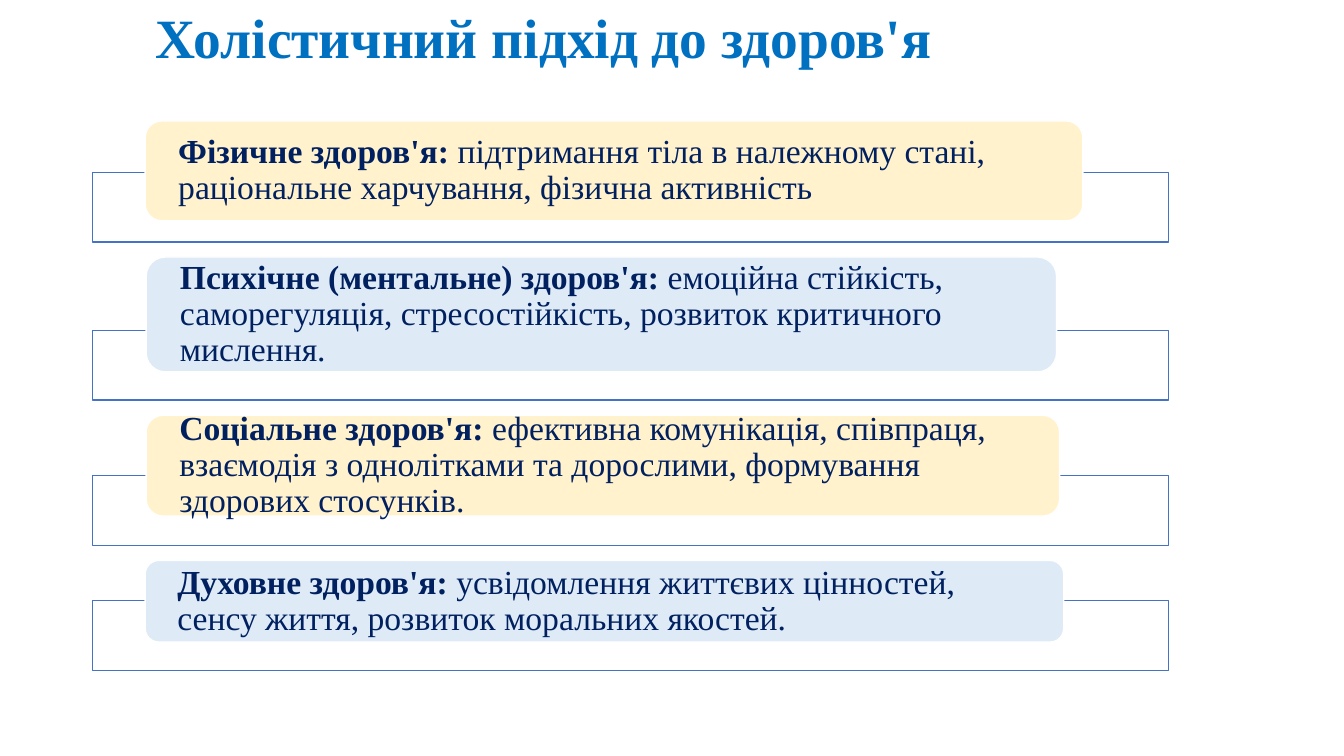
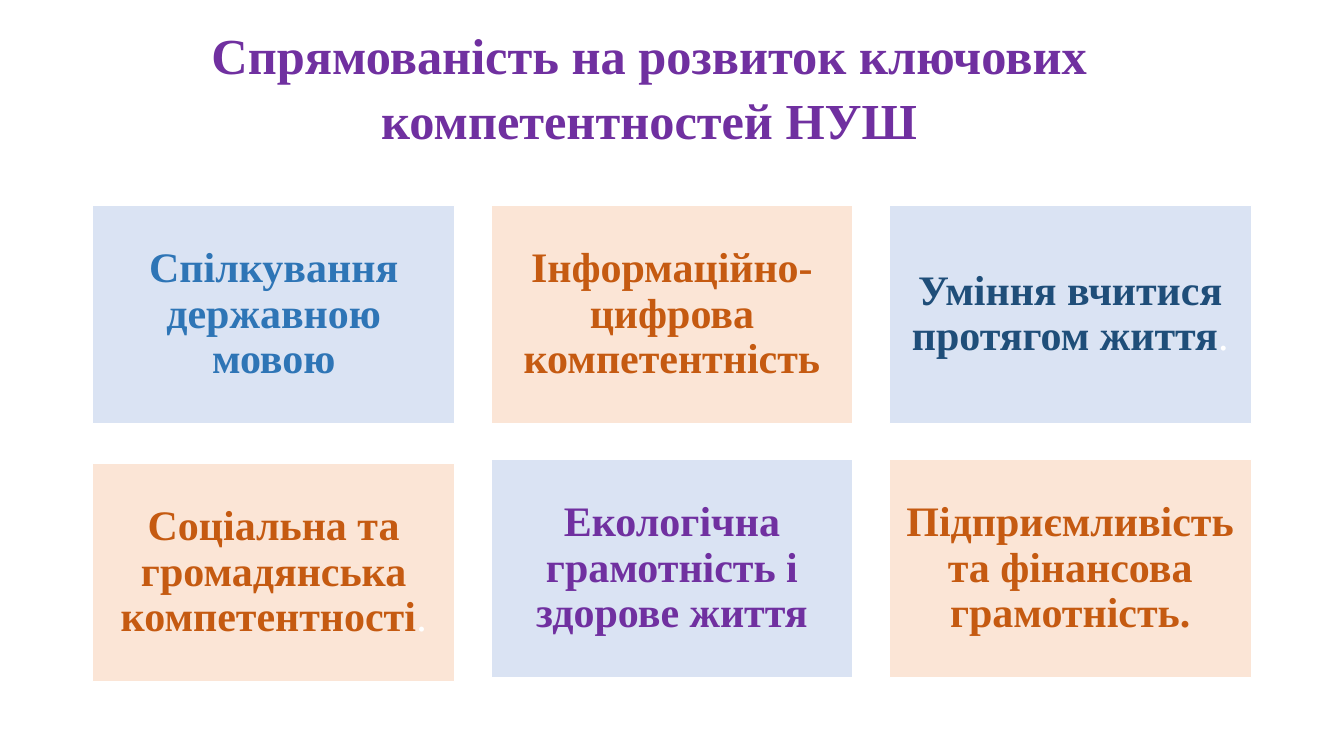
from pptx import Presentation
from pptx.dml.color import RGBColor
from pptx.enum.shapes import MSO_SHAPE
from pptx.enum.text import MSO_ANCHOR, MSO_AUTO_SIZE, PP_ALIGN
from pptx.util import Inches, Pt

RECTANGLE, ROUNDED = MSO_SHAPE.RECTANGLE, MSO_SHAPE.ROUNDED_RECTANGLE
LEFT, CENTER = PP_ALIGN.LEFT, PP_ALIGN.CENTER
MIDDLE, NO_FIT = MSO_ANCHOR.MIDDLE, MSO_AUTO_SIZE.NONE
FONT = "Times New Roman"
TITLE_ONLY = 5
COLORS = {
    "white": "FFFFFF", "frame": "4472C4", "title": "0070C0", "navy": "002060",
    "cream": "FFF2CC", "sky": "DEEBF7", "ice": "DAE3F3", "peach": "FBE5D6",
    "blue": "2E75B6", "orange": "C55A11", "deep": "1F4E79", "purple": "7030A0",
}
ASPECTS = [
    ("Фізичне здоров'я:",
     " підтримання тіла в належному стані, раціональне харчування, фізична активність",
     (1.44, 1.2, 9.3, 0.99), 1.71),
    ("Психічне (ментальне) здоров'я:",
     " емоційна стійкість, саморегуляція, стресостійкість, розвиток критичного мислення.",
     (1.45, 2.55, 9.03, 1.14), 3.28),
    ("Соціальне здоров'я:",
     " ефективна комунікація, співпраця, взаємодія з однолітками та дорослими, "
     "формування здорових стосунків.",
     (1.45, 4.12, 9.06, 1), 4.72),
    ("Духовне здоров'я:",
     " усвідомлення життєвих цінностей, сенсу життя, розвиток моральних якостей.",
     (1.44, 5.56, 9.11, 0.81), 5.96),
]
COMPETENCES = [
    ("Спілкування державною мовою", "", "blue", 0),
    ("Інформаційно-цифрова компетентність", "", "orange", 0),
    ("Уміння вчитися протягом життя", ".", "deep", 0),
    ("Соціальна та громадянська компетентності", ".", "orange", 0.04),
    ("Екологічна грамотність і здорове життя", "", "purple", 0),
    ("Підприємливість та фінансова грамотність.", "", "orange", 0),
]


def rgb(name):
    """Return the named colour."""
    return RGBColor.from_string(COLORS[name])


def write_text(shape, spans, size, align=LEFT, spacing=0.9, insets=(0.1, 0.05)):
    """Fill a shape with one paragraph of (text, colour, bold) spans."""
    frame = shape.text_frame
    frame.word_wrap = True
    frame.auto_size = NO_FIT
    frame.vertical_anchor = MIDDLE
    frame.margin_left = frame.margin_right = Inches(insets[0])
    frame.margin_top = frame.margin_bottom = Inches(insets[1])
    para = frame.paragraphs[0]
    para.alignment = align
    para.line_spacing = spacing
    for text, color, bold in spans:
        span = para.add_run()
        span.text = text
        span.font.name = FONT
        span.font.size = Pt(size)
        span.font.bold = bold
        span.font.color.rgb = rgb(color)


def add_box(page, kind, box, fill, line="white"):
    """Add a filled, outlined shape without a shadow."""
    shape = page.shapes.add_shape(kind, *map(Inches, box))
    shape.shadow.inherit = False
    shape.fill.solid()
    shape.fill.fore_color.rgb = rgb(fill)
    shape.line.color.rgb = rgb(line)
    shape.line.width = Pt(1)
    return shape


def add_page(deck, title, box, color, size, **layout):
    """Add a slide with its title placed in the given box."""
    page = deck.slides.add_slide(deck.slide_layouts[TITLE_ONLY])
    heading = page.shapes.title
    heading.left, heading.top, heading.width, heading.height = map(Inches, box)
    write_text(heading, [(title, color, True)], size, **layout)
    return page


def add_aspect(page, box, frame_top, fill, label, detail):
    """Draw a rounded card over its outlined frame."""
    add_box(page, RECTANGLE, (0.92, frame_top, 10.67, 0.69), "white", "frame")
    card = add_box(page, ROUNDED, box, fill)
    spans = [(label, "navy", True), (detail, "navy", False)]
    write_text(card, spans, 24, insets=(0.28, 0))


def add_competence_grid(page, left, top, columns=3):
    """Draw the tiles in rows with alternating fills."""
    width, height, step_x, step_y = 3.59, 2.16, 3.95, 2.52
    for index, (text, stop, color, shift) in enumerate(COMPETENCES):
        row, column = divmod(index, columns)
        box = (left + column * step_x, top + row * step_y + shift, width, height)
        tile = add_box(page, RECTANGLE, box, ("ice", "peach")[index % 2])
        spans = [(text, color, True)]
        if stop:
            spans.append((stop, "white", False))
        write_text(tile, spans, 30, align=CENTER, insets=(0.12, 0.12))


def build_health_page(deck):
    """Build the slide on the holistic approach."""
    page = add_page(deck, "Холістичний підхід до здоров'я",
                    (1.44, 0.19, 9.46, 0.42), "title", 39.6)
    for index, (label, detail, box, frame_top) in enumerate(ASPECTS):
        add_aspect(page, box, frame_top, ("cream", "sky")[index % 2], label, detail)


def build_competence_page(deck):
    """Build the slide on the key competences."""
    page = add_page(deck, "Спрямованість на розвиток ключових компетентностей НУШ",
                    (0.46, 0.13, 11.96, 1.41), "purple", 36,
                    align=CENTER, spacing=Pt(47))
    add_competence_grid(page, 0.92, 2.04)


def main():
    """Build and save the deck."""
    deck = Presentation()
    deck.slide_width, deck.slide_height = Inches(13.33), Inches(7.5)
    build_health_page(deck)
    build_competence_page(deck)
    deck.save("out.pptx")


if __name__ == "__main__":
    main()
